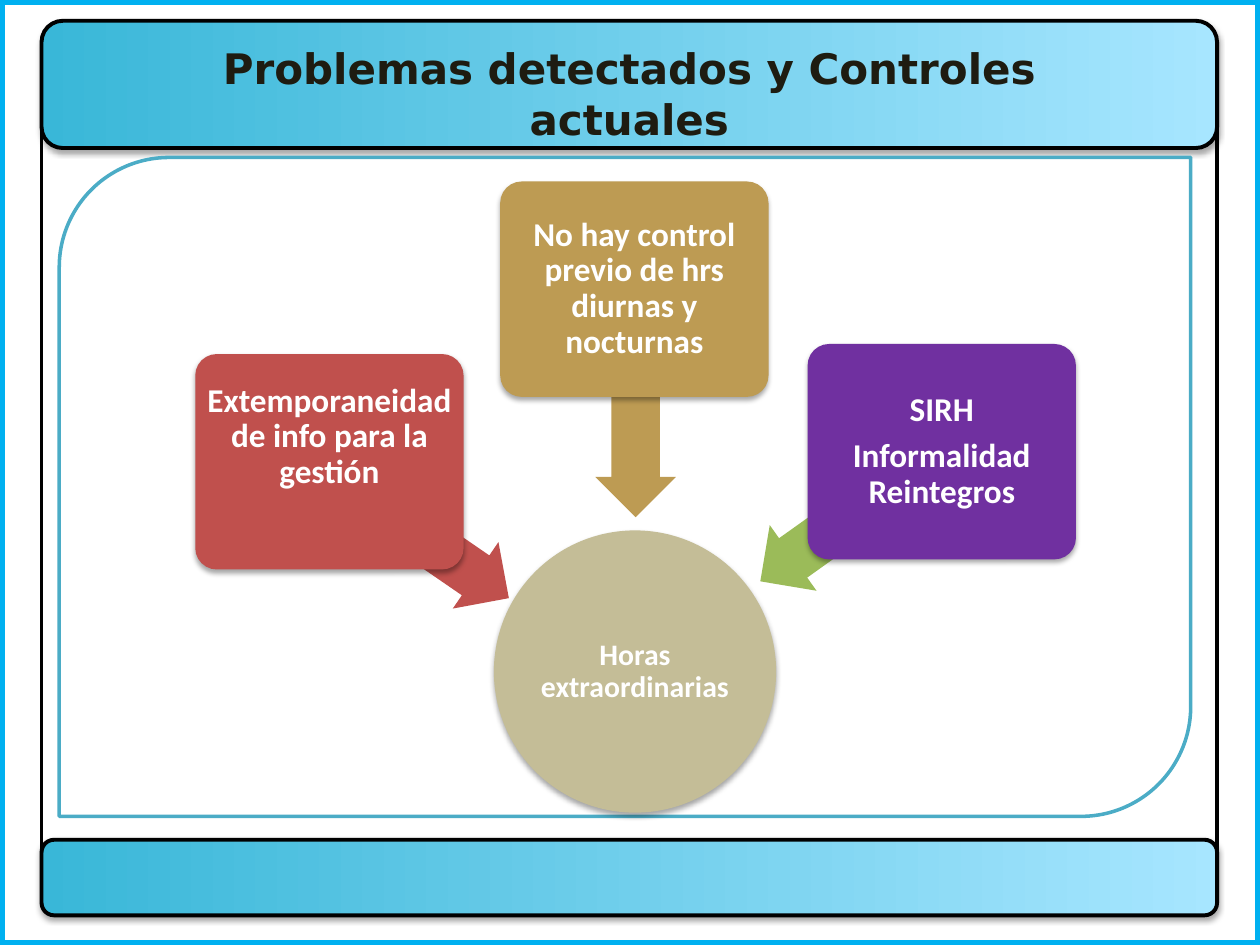
from dataclasses import dataclass
from typing import Optional

from lxml.etree import SubElement
from pptx import Presentation
from pptx.dml.color import RGBColor
from pptx.enum.shapes import MSO_SHAPE
from pptx.enum.text import MSO_ANCHOR, MSO_AUTO_SIZE, PP_ALIGN
from pptx.oxml.ns import qn
from pptx.util import Inches, Pt

# Grid of 100 columns by 75 rows of square cells
COLUMNS, ROWS, CELL = 100, 75, 0.1
CARD_WIDTH, CARD_HEIGHT, ARROW_HEIGHT = 21.3, 17.1, 6.4

COLORS = {
    "white": "FFFFFF", "black": "000000", "border": "00B0F0",
    "bar_start": "39B7D8", "bar_end": "A7E6FF", "panel": "4BACC6",
    "title": "1E1C11", "hub": "C4BD97", "red": "C0504D",
    "gold": "BD9B53", "purple": "7030A0", "green": "9BBB59",
}


@dataclass
class Box:
    column: float
    row: float
    width: float
    height: float


@dataclass
class Problem:
    lines: list[str]
    column: float
    row: float
    color: str
    arrow: Box
    angle: float
    arrow_color: str
    bottom_inset: float = 0.03


def cells(count: float) -> int:
    return Inches(count * CELL)


def rgb(name: str) -> RGBColor:
    return RGBColor.from_string(COLORS[name])


def add_shadow(shape) -> None:
    effects = shape._element.spPr.find(qn("a:effectLst"))
    outer = SubElement(effects, qn("a:outerShdw"), blurRad=str(Pt(3.1)),
                       dist=str(Pt(1.8)), dir="5400000", rotWithShape="0")
    color = SubElement(outer, qn("a:srgbClr"), val=COLORS["black"])
    SubElement(color, qn("a:alpha"), val="35000")


def draw(slide, kind: MSO_SHAPE, box: Box, fill: str, line: Optional[str] = None,
         weight: float = 1, shadow: bool = False):
    shape = slide.shapes.add_shape(kind, cells(box.column), cells(box.row),
                                   cells(box.width), cells(box.height))
    shape.shadow.inherit = False
    shape.fill.solid()
    shape.fill.fore_color.rgb = rgb(fill)
    if line:
        shape.line.color.rgb = rgb(line)
        shape.line.width = Pt(weight)
    else:
        shape.line.fill.background()
    if shadow:
        add_shadow(shape)
    return shape


def draw_bar(slide, box: Box) -> None:
    bar = draw(slide, MSO_SHAPE.FLOWCHART_ALTERNATE_PROCESS, box, "bar_start",
               "black", 2.25, shadow=True)
    bar.fill.gradient()
    bar.fill.gradient_angle = 0
    for stop, name in zip(bar.fill.gradient_stops, ("bar_start", "bar_end")):
        stop.color.rgb = rgb(name)


def write(shape, lines: list[str], size: float, inset: float, bottom: float) -> None:
    frame = shape.text_frame
    frame.word_wrap = True
    frame.vertical_anchor = MSO_ANCHOR.MIDDLE
    frame.margin_left = frame.margin_right = frame.margin_top = Inches(inset)
    frame.margin_bottom = Inches(bottom)
    frame.text = "\n".join(lines)
    for paragraph in frame.paragraphs:
        paragraph.alignment = PP_ALIGN.CENTER
        paragraph.line_spacing = 0.9
        paragraph.space_after = Pt(6)
        font = paragraph.font
        font.name, font.size, font.bold = "Calibri", Pt(size), True
        font.color.rgb = rgb("white")


def draw_problem(slide, problem: Problem) -> None:
    arrow = draw(slide, MSO_SHAPE.LEFT_ARROW, problem.arrow, problem.arrow_color)
    arrow.adjustments[0], arrow.adjustments[1] = 0.6, 0.5
    arrow.rotation = problem.angle
    card = draw(slide, MSO_SHAPE.ROUNDED_RECTANGLE,
                Box(problem.column, problem.row, CARD_WIDTH, CARD_HEIGHT),
                problem.color, shadow=True)
    card.adjustments[0] = 0.1
    write(card, problem.lines, 19, 0.03, problem.bottom_inset)


def set_title(slide, text: str, box: Box) -> None:
    title = slide.shapes.title
    title.left, title.top = cells(box.column), cells(box.row)
    title.width, title.height = cells(box.width), cells(box.height)
    frame = title.text_frame
    frame.text = text
    frame.word_wrap = True
    frame.auto_size = MSO_AUTO_SIZE.NONE
    frame.vertical_anchor = MSO_ANCHOR.TOP
    paragraph = frame.paragraphs[0]
    paragraph.alignment = PP_ALIGN.CENTER
    font = paragraph.font
    font.name, font.size, font.bold = "DejaVu Sans", Pt(24), True
    font.color.rgb = rgb("title")
    slide.shapes._spTree.append(title._element)  # bring in front of the bar


PROBLEMS = [
    Problem(["Extemporaneidad de info para la gestión"], 15.5, 28.1, "red",
            Box(24.7, 39.4, 17.2, ARROW_HEIGHT), 214.5, "red", bottom_inset=0.42),
    Problem(["No hay control previo de hrs diurnas y nocturnas"], 39.7, 14.4, "gold",
            Box(41.4, 28.8, 18.1, ARROW_HEIGHT), 270, "gold"),
    Problem(["SIRH", "Informalidad Reintegros"], 64.1, 27.3, "purple",
            Box(58.7, 37.8, 17.7, ARROW_HEIGHT), 324.5, "green"),
]


def main() -> None:
    deck = Presentation()
    deck.slide_width, deck.slide_height = cells(COLUMNS), cells(ROWS)
    slide = deck.slides.add_slide(deck.slide_layouts[5])

    # Border, page frame and bars
    draw(slide, MSO_SHAPE.RECTANGLE, Box(0, 0, COLUMNS, ROWS), "white", "border", 6)
    draw(slide, MSO_SHAPE.FLOWCHART_PROCESS, Box(3.3, 5, 93.3, 63.3),
         "white", "black", 2.25)
    for row, height in ((1.65, 10.1), (66.65, 6)):
        draw_bar(slide, Box(3.3, row, 93.3, height))

    # Panel and title
    draw(slide, MSO_SHAPE.ROUND_2_DIAG_RECTANGLE, Box(4.7, 12.5, 89.8, 52.3),
         "white", "panel", 2)
    set_title(slide, "Problemas detectados y Controles actuales",
              Box(10.8, 2.9, 78.3, 8.9))

    # Hub and the problems that point to it
    hub = draw(slide, MSO_SHAPE.OVAL, Box(39.2, 42.1, 22.4, 22.4), "hub", shadow=True)
    write(hub, ["Horas extraordinarias"], 17, 0.01, 0.01)
    for problem in PROBLEMS:
        draw_problem(slide, problem)

    deck.save("out.pptx")


if __name__ == "__main__":
    main()
